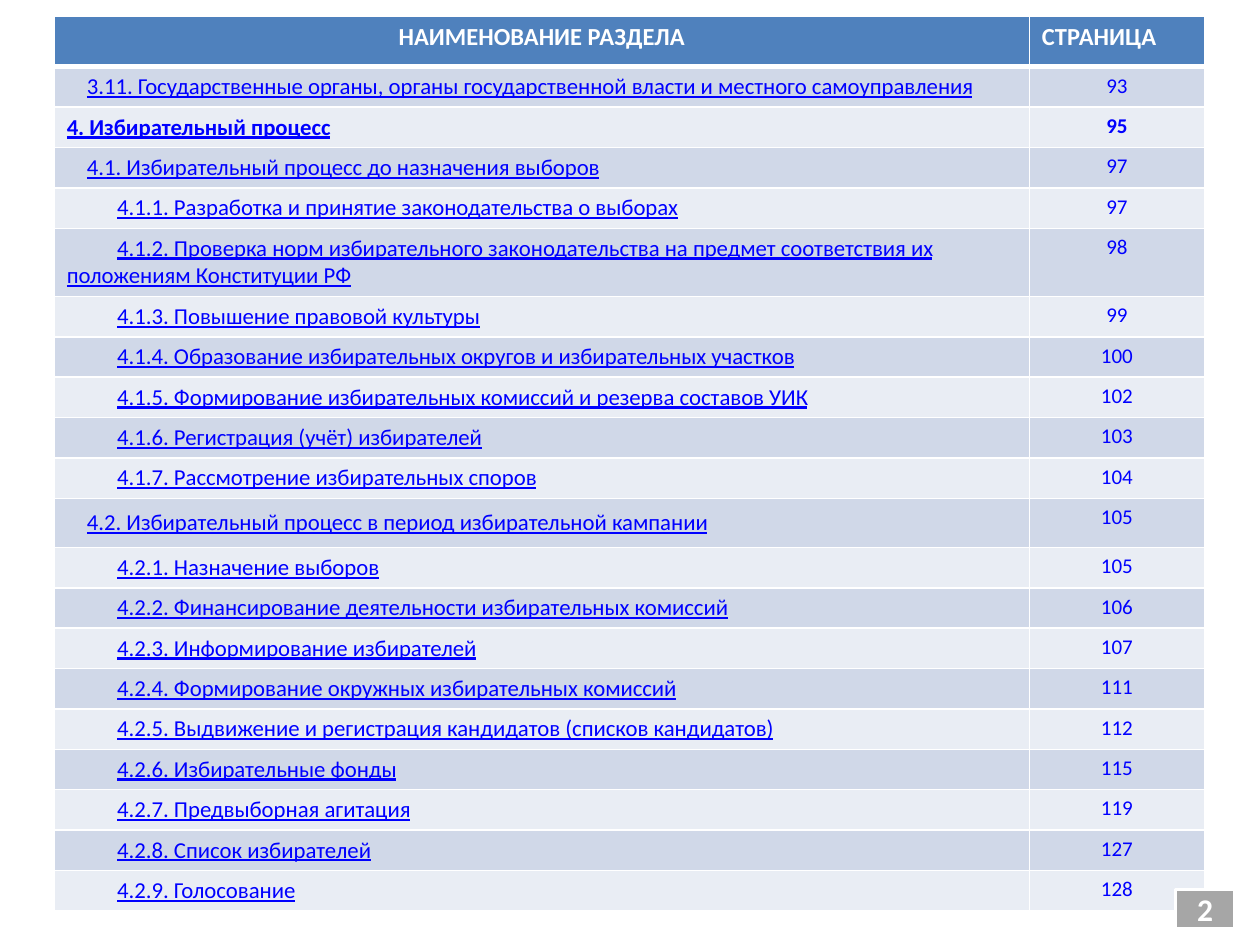
import pptx
import pptx.util
import pptx.dml.color
import pptx.enum.shapes
import pptx.enum.text
import pptx.oxml.ns
from lxml import etree

Inches, Pt = pptx.util.Inches, pptx.util.Pt
RGBColor = pptx.dml.color.RGBColor
PP_ALIGN, MSO_ANCHOR = pptx.enum.text.PP_ALIGN, pptx.enum.text.MSO_ANCHOR
qn = pptx.oxml.ns.qn

WHITE = RGBColor(0xFF, 0xFF, 0xFF)
HEADER_BLUE = RGBColor(0x4F, 0x81, 0xBD)
BANDS = (RGBColor(0xD0, 0xD8, 0xE8), RGBColor(0xE9, 0xED, 0xF4))
LINK_BLUE = RGBColor(0x00, 0x00, 0xFF)
GREY = RGBColor(0xA6, 0xA6, 0xA6)
FONT = "Calibri"

HEADER = ("НАИМЕНОВАНИЕ РАЗДЕЛА", "СТРАНИЦА")
# level, section, page
SECTIONS = [
    (1, "3.11. Государственные органы, органы государственной власти и местного самоуправления", 93),
    (0, "4. Избирательный процесс", 95),
    (1, "4.1. Избирательный процесс до назначения выборов", 97),
    (2, "4.1.1. Разработка и принятие законодательства о выборах", 97),
    (2, "4.1.2. Проверка норм избирательного законодательства на предмет соответствия их "
        "положениям Конституции РФ", 98),
    (2, "4.1.3. Повышение правовой культуры", 99),
    (2, "4.1.4. Образование избирательных округов и избирательных участков", 100),
    (2, "4.1.5. Формирование избирательных комиссий и резерва составов УИК", 102),
    (2, "4.1.6. Регистрация (учёт) избирателей", 103),
    (2, "4.1.7. Рассмотрение избирательных споров", 104),
    (1, "4.2. Избирательный процесс в период избирательной кампании", 105),
    (2, "4.2.1. Назначение выборов", 105),
    (2, "4.2.2. Финансирование деятельности избирательных комиссий", 106),
    (2, "4.2.3. Информирование избирателей", 107),
    (2, "4.2.4. Формирование окружных избирательных комиссий", 111),
    (2, "4.2.5. Выдвижение и регистрация кандидатов (списков кандидатов)", 112),
    (2, "4.2.6. Избирательные фонды", 115),
    (2, "4.2.7. Предвыборная агитация", 119),
    (2, "4.2.8. Список избирателей", 127),
    (2, "4.2.9. Голосование", 128),
]
COLUMN_WIDTHS = (7.74, 1.39)
ROW_HEIGHT = 0.31
SPECIAL_HEIGHTS = {0: 0.4, 5: 0.53, 11: 0.39}
FIRST_LINE_INDENTS = (0, 0.16, 0.4)


def write(frame, text, size, color, bold=False, underline=None, align=None):
    paragraph = frame.paragraphs[0]
    paragraph.text = text
    paragraph.alignment = align
    font = paragraph.font
    font.name, font.size, font.bold = FONT, Pt(size), bold
    font.color.rgb = color
    span_font = paragraph.runs[0].font
    span_font.color.rgb = color
    span_font.bold = bold
    span_font.underline = underline
    return paragraph


def paint(cell, color, bottom_width=1):
    """Fill a cell and give it white borders."""
    properties = cell._tc.get_or_add_tcPr()
    for side in ("lnL", "lnR", "lnT", "lnB"):
        width = bottom_width if side == "lnB" else 1
        line = etree.SubElement(properties, qn("a:" + side), w=str(Pt(width)))
        fill = etree.SubElement(line, qn("a:solidFill"))
        etree.SubElement(fill, qn("a:srgbClr"), val=str(WHITE))
    cell.fill.solid()
    cell.fill.fore_color.rgb = color


def add_contents_table(page):
    heights = [SPECIAL_HEIGHTS.get(i, ROW_HEIGHT) for i in range(len(SECTIONS) + 1)]
    table = page.shapes.add_table(
        len(heights), len(COLUMN_WIDTHS), Inches(0.43), Inches(0.13),
        Inches(sum(COLUMN_WIDTHS)), Inches(sum(heights))).table
    for column, width in zip(table.columns, COLUMN_WIDTHS):
        column.width = Inches(width)
    for row, height in zip(table.rows, heights):
        row.height = Inches(height)

    for column, (text, align) in enumerate(zip(HEADER, (PP_ALIGN.CENTER, PP_ALIGN.LEFT))):
        cell = table.cell(0, column)
        paint(cell, HEADER_BLUE, bottom_width=3)
        write(cell.text_frame, text, 14, WHITE, bold=True, align=align)

    for row, (level, section, number) in enumerate(SECTIONS, start=1):
        name_cell, page_cell = table.cell(row, 0), table.cell(row, 1)
        for cell in (name_cell, page_cell):
            paint(cell, BANDS[(row - 1) % 2])
        bold = level == 0
        name_cell.vertical_anchor = MSO_ANCHOR.MIDDLE
        paragraph = write(name_cell.text_frame, section, 13, LINK_BLUE, bold, underline=True)
        indent = Inches(FIRST_LINE_INDENTS[level])
        paragraph._p.get_or_add_pPr().set("indent", str(indent))
        write(page_cell.text_frame, str(number), 12, LINK_BLUE, bold, align=PP_ALIGN.CENTER)


def add_page_number(page, number):
    box = page.shapes.add_shape(pptx.enum.shapes.MSO_SHAPE.RECTANGLE, Inches(9.33),
                                Inches(7.06), Inches(0.47), Inches(0.31))
    box.shadow.inherit = False
    box.fill.solid()
    box.fill.fore_color.rgb = GREY
    box.line.color.rgb = WHITE
    box.line.width = Pt(2)
    box.text_frame.vertical_anchor = MSO_ANCHOR.MIDDLE
    write(box.text_frame, str(number), 18, WHITE, bold=True, align=PP_ALIGN.CENTER)


def main():
    deck = pptx.Presentation()
    deck.slide_width, deck.slide_height = Inches(10), Inches(7.5)
    page = deck.slides.add_slide(deck.slide_layouts[6])
    add_contents_table(page)
    add_page_number(page, 2)
    deck.save("out.pptx")


if __name__ == "__main__":
    main()
